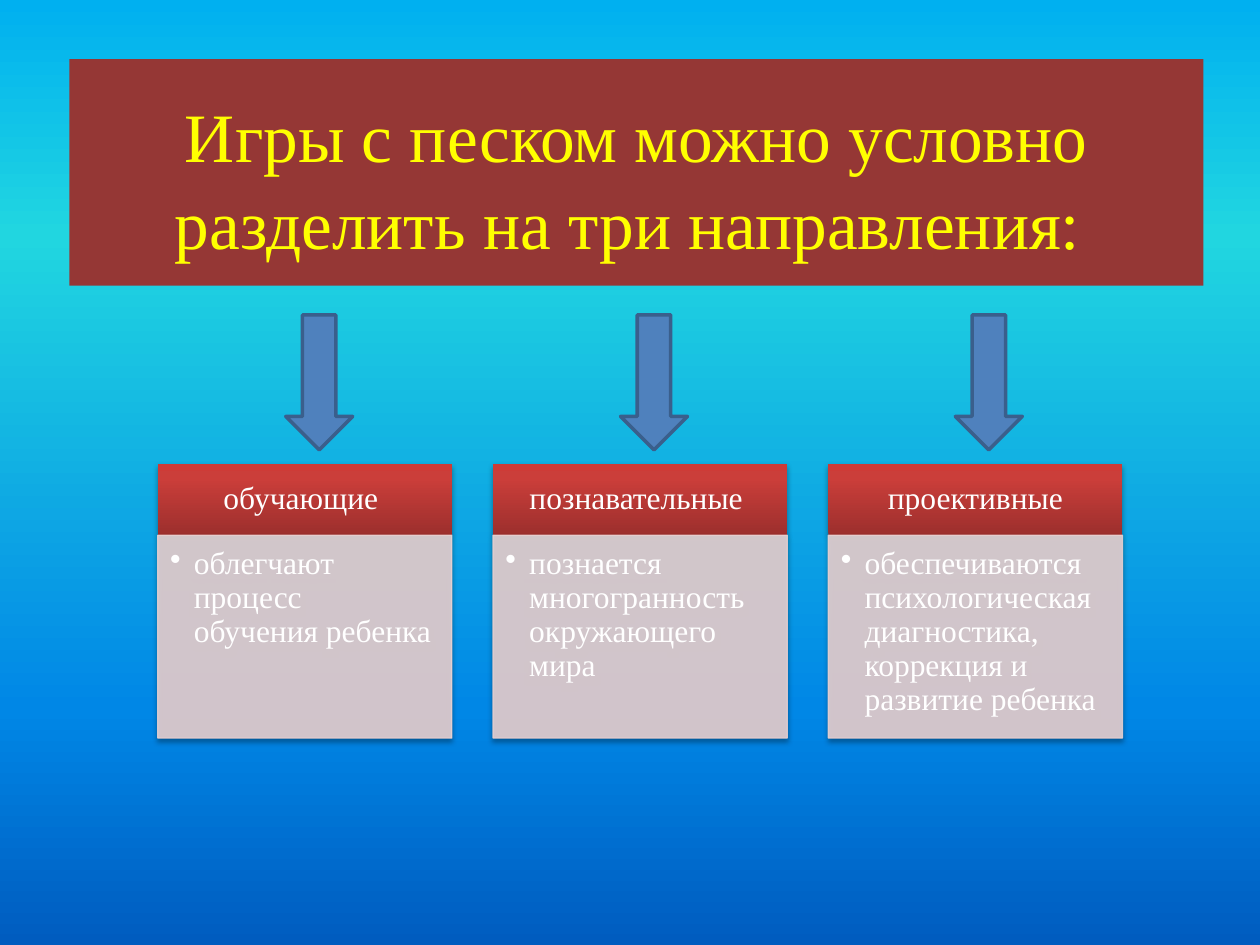
"""Build a slide that shows three directions of sand play under one heading."""
from dataclasses import dataclass

from lxml.etree import SubElement
from pptx import Presentation
from pptx.dml.color import RGBColor
from pptx.enum.shapes import MSO_SHAPE
from pptx.enum.text import MSO_ANCHOR, PP_ALIGN
from pptx.oxml.ns import qn
from pptx.util import Cm, Pt


@dataclass(frozen=True)
class Theme:
    font: str = "Times New Roman"
    title_size: float = 39.6
    text_size: float = 18
    title_fill: str = "953735"
    title_text: str = "FFFF00"
    text: str = "FFFFFF"
    body: str = "E8D0D0"
    arrow: str = "4F81BD"
    arrow_line: str = "3A5F8C"
    shadow: str = "000000"
    sky: tuple = ((0, "00B0F0"), (25, "21D6E0"), (75, "0087E6"), (100, "005CBF"))
    header: tuple = ((0, "9C2F2D"), (80, "CB3E3A"), (100, "CE3B37"))


def paint_gradient(fill, element, stops, angle):
    fill.gradient()
    fill.gradient_angle = angle
    stop_list = next(element.iter(qn("a:gsLst")))
    for old_stop in list(stop_list):
        stop_list.remove(old_stop)
    for position, color in stops:
        stop = SubElement(stop_list, qn("a:gs"), pos=str(position * 1000))
        SubElement(stop, qn("a:srgbClr"), val=color)


def add_text(para, text, size, color):
    span = para.add_run()
    span.text = text
    span.font.name = theme.font
    span.font.size = Pt(size)
    span.font.color.rgb = RGBColor.from_string(color)


theme = Theme()
directions = (
    ("обучающие ", "облегчают процесс обучения ребенка"),
    ("познавательные ", "познается многогранность окружающего мира"),
    ("проективные", "обеспечиваются психологическая диагностика, коррекция и развитие ребенка"),
)

deck = Presentation()
deck.slide_width, deck.slide_height = Cm(25.4), Cm(19.05)
page = deck.slides.add_slide(deck.slide_layouts[5])
paint_gradient(page.background.fill, page.element, theme.sky, 270)

title = page.shapes.title
title.left, title.top, title.width, title.height = Cm(1.4), Cm(1.19), Cm(22.86), Cm(4.57)
title.fill.solid()
title.fill.fore_color.rgb = RGBColor.from_string(theme.title_fill)
title.text_frame.vertical_anchor = MSO_ANCHOR.MIDDLE
title.text_frame.margin_top = Cm(0.28)
para = title.text_frame.paragraphs[0]
para.alignment = PP_ALIGN.CENTER
para.line_spacing = 1.05
add_text(para, "Игры с песком можно условно разделить на три направления: ",
         theme.title_size, theme.title_text)

for index, (name, purpose) in enumerate(directions):
    left = Cm(3.18 + 6.76 * index)
    header = page.shapes.add_shape(MSO_SHAPE.RECTANGLE, left, Cm(9.35), Cm(5.93), Cm(1.44))
    paint_gradient(header.fill, header.element, theme.header, 90)
    header.line.fill.background()
    body = page.shapes.add_shape(MSO_SHAPE.RECTANGLE, left, Cm(10.79), Cm(5.93), Cm(4.09))
    body.fill.solid()
    body.fill.fore_color.rgb = RGBColor.from_string(theme.body)
    body.line.color.rgb = RGBColor.from_string(theme.body)
    body.line.width = Pt(0.75)
    for color in body.element.spPr.iter(qn("a:srgbClr")):
        SubElement(color, qn("a:alpha"), val="90000")

    for box, text in ((header, name), (body, purpose)):
        box.shadow.inherit = False
        effects = box.element.spPr.find(qn("a:effectLst"))
        shadow = SubElement(effects, qn("a:outerShdw"), blurRad=str(Pt(3.1)),
                            dist=str(Pt(1.8)), dir="5400000", rotWithShape="0")
        color = SubElement(shadow, qn("a:srgbClr"), val=theme.shadow)
        SubElement(color, qn("a:alpha"), val="35000")
        box.text_frame.word_wrap = True
        box.text_frame.margin_right = Cm(0.36)
        para = box.text_frame.paragraphs[0]
        para.line_spacing = 0.9
        add_text(para, text, theme.text_size, theme.text)

    frame = header.text_frame
    frame.margin_left, frame.margin_top, frame.margin_bottom = Cm(0.36), Cm(0.2), Cm(0.2)
    frame.vertical_anchor = MSO_ANCHOR.MIDDLE
    frame.paragraphs[0].alignment = PP_ALIGN.CENTER

    frame = body.text_frame
    frame.margin_left, frame.margin_top, frame.margin_bottom = Cm(0.25), Cm(0.25), Cm(0.41)
    frame.vertical_anchor = MSO_ANCHOR.TOP
    para = frame.paragraphs[0]
    para.alignment = PP_ALIGN.LEFT
    properties = para._p.get_or_add_pPr()
    properties.set("marL", str(Cm(0.48)))
    properties.set("indent", str(-Cm(0.48)))
    SubElement(properties, qn("a:buChar"), char="•")

for index in range(len(directions)):
    arrow = page.shapes.add_shape(MSO_SHAPE.DOWN_ARROW, Cm(5.76 + 6.75 * index), Cm(6.35),
                                  Cm(1.35), Cm(2.72))
    arrow.shadow.inherit = False
    arrow.fill.solid()
    arrow.fill.fore_color.rgb = RGBColor.from_string(theme.arrow)
    arrow.line.color.rgb = RGBColor.from_string(theme.arrow_line)
    arrow.line.width = Pt(2)

deck.save("out.pptx")
